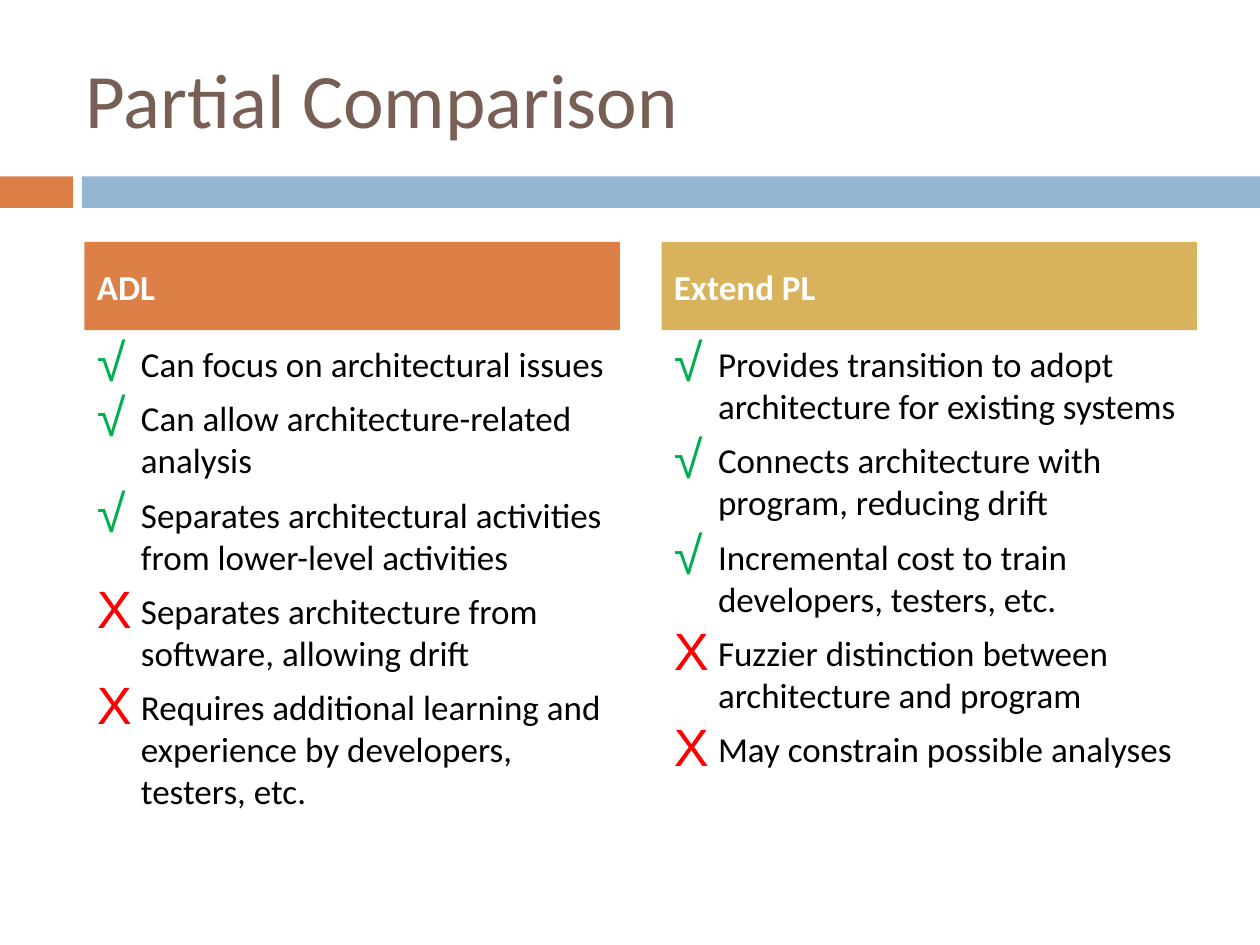
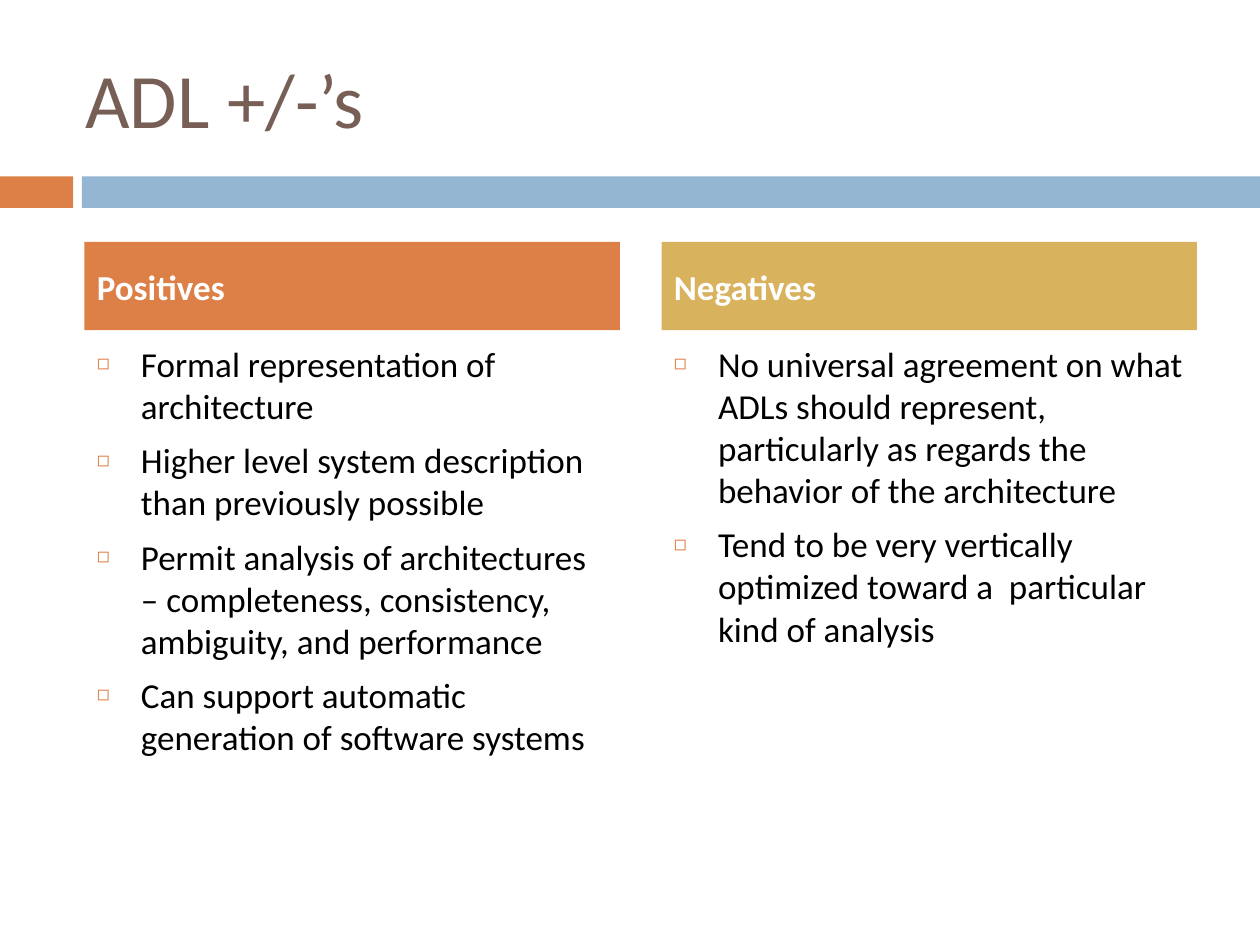
from lxml import etree
from pptx import Presentation
from pptx.dml.color import RGBColor
from pptx.enum.shapes import MSO_SHAPE
from pptx.enum.text import MSO_ANCHOR, PP_ALIGN
from pptx.oxml.ns import qn
from pptx.util import Inches, Pt

RECT = MSO_SHAPE.RECTANGLE
TOP, MIDDLE = MSO_ANCHOR.TOP, MSO_ANCHOR.MIDDLE
LEFT = PP_ALIGN.LEFT

# Shared colours and formats
ORANGE, BLUE, GOLD = "DD8047", "94B6D2", "D8B25C"
TITLE = {"size": Pt(44), "name": "Calibri", "bold": False, "color": "775F55"}
HEAD = {"size": Pt(20), "name": "Calibri", "bold": True, "color": "FFFFFF"}
BODY = {"size": Pt(20), "name": "Calibri", "bold": False, "color": "000000"}
GAP = Pt(7)
INDENT = Inches(0.35)

# Bullet styles: sign, colour, size in percent
PRO = ("√", "00B050", 150)
CON = ("X", "FF0000", 150)
BOX = ("◻", ORANGE, 60)

# Bands under the title, and columns: left edge and header colour
BANDS = [(0, 0.58, ORANGE), (0.65, 9.35, BLUE)]
COLUMNS = [(0.67, ORANGE), (5.25, GOLD)]
WIDTH = 4.25

# Content: title, then for each column a header and bulleted lines
SLIDES = [
    ("Partial Comparison", [
        ("ADL", [
            (PRO, "Can focus on architectural issues"),
            (PRO, "Can allow architecture-related analysis"),
            (PRO, "Separates architectural activities from lower-level activities"),
            (CON, "Separates architecture from software, allowing drift"),
            (CON, "Requires additional learning and experience by developers, "
                  "testers, etc."),
        ]),
        ("Extend PL", [
            (PRO, "Provides transition to adopt architecture for existing systems"),
            (PRO, "Connects architecture with program, reducing drift"),
            (PRO, "Incremental cost to train developers, testers, etc."),
            (CON, "Fuzzier distinction between architecture and program"),
            (CON, "May constrain possible analyses"),
        ]),
    ]),
    ("ADL +/-’s", [
        ("Positives", [
            (BOX, "Formal representation of architecture"),
            (BOX, "Higher level system description than previously possible"),
            (BOX, "Permit analysis of architectures – completeness, consistency, "
                  "ambiguity, and performance"),
            (BOX, "Can support automatic generation of software systems"),
        ]),
        ("Negatives", [
            (BOX, "No universal agreement on what ADLs should represent, "
                  "particularly as regards the behavior of the architecture"),
            (BOX, "Tend to be very vertically optimized toward a  particular "
                  "kind of analysis"),
        ]),
    ]),
]


def add_box(slide, place, fill=None):
    """Add a filled rectangle, or a plain text box when there is no fill."""
    at = [Inches(n) for n in place]
    if fill is None:
        return slide.shapes.add_textbox(*at)
    box = slide.shapes.add_shape(RECT, *at)
    box.shadow.inherit = False
    box.fill.solid()
    box.fill.fore_color.rgb = RGBColor.from_string(fill)
    box.line.fill.background()
    return box


def add_text(box, lines, form, anchor=MIDDLE, gap=GAP):
    """Write (bullet, text) lines into a box."""
    frame = box.text_frame
    frame.word_wrap = True
    frame.vertical_anchor = anchor
    for i, (bullet, text) in enumerate(lines):
        para = frame.paragraphs[0] if i == 0 else frame.add_paragraph()
        para.alignment = LEFT
        para.space_before = gap
        run = para.add_run()
        run.text = text
        for key, value in form.items():
            if key == "color":
                run.font.color.rgb = RGBColor.from_string(value)
            else:
                setattr(run.font, key, value)
        if bullet:
            sign, color, size = bullet
            props = para._p.get_or_add_pPr()
            props.set("marL", str(INDENT))
            props.set("indent", str(-INDENT))
            tint = etree.SubElement(props, qn("a:buClr"))
            etree.SubElement(tint, qn("a:srgbClr"), val=color)
            etree.SubElement(props, qn("a:buSzPct"), val=str(size * 1000))
            etree.SubElement(props, qn("a:buFont"), typeface="Arial")
            etree.SubElement(props, qn("a:buChar"), char=sign)


deck = Presentation()
deck.slide_width, deck.slide_height = Inches(10), Inches(7.5)

for title, parts in SLIDES:
    slide = deck.slides.add_slide(deck.slide_layouts[6])

    # Bands and title
    for left, width, fill in BANDS:
        add_box(slide, (left, 1.4, width, 0.25), fill)
    add_text(add_box(slide, (0.58, 0.3, 8.92, 0.95)), [(None, title)],
             TITLE, gap=Pt(0))

    # Two columns, each a header over a list
    for (left, fill), (head, lines) in zip(COLUMNS, parts):
        add_text(add_box(slide, (left, 1.92, WIDTH, 0.7), fill),
                 [(None, head)], HEAD)
        add_text(add_box(slide, (left, 2.67, WIDTH, 3.92)), lines, BODY, TOP)

deck.save("out.pptx")
